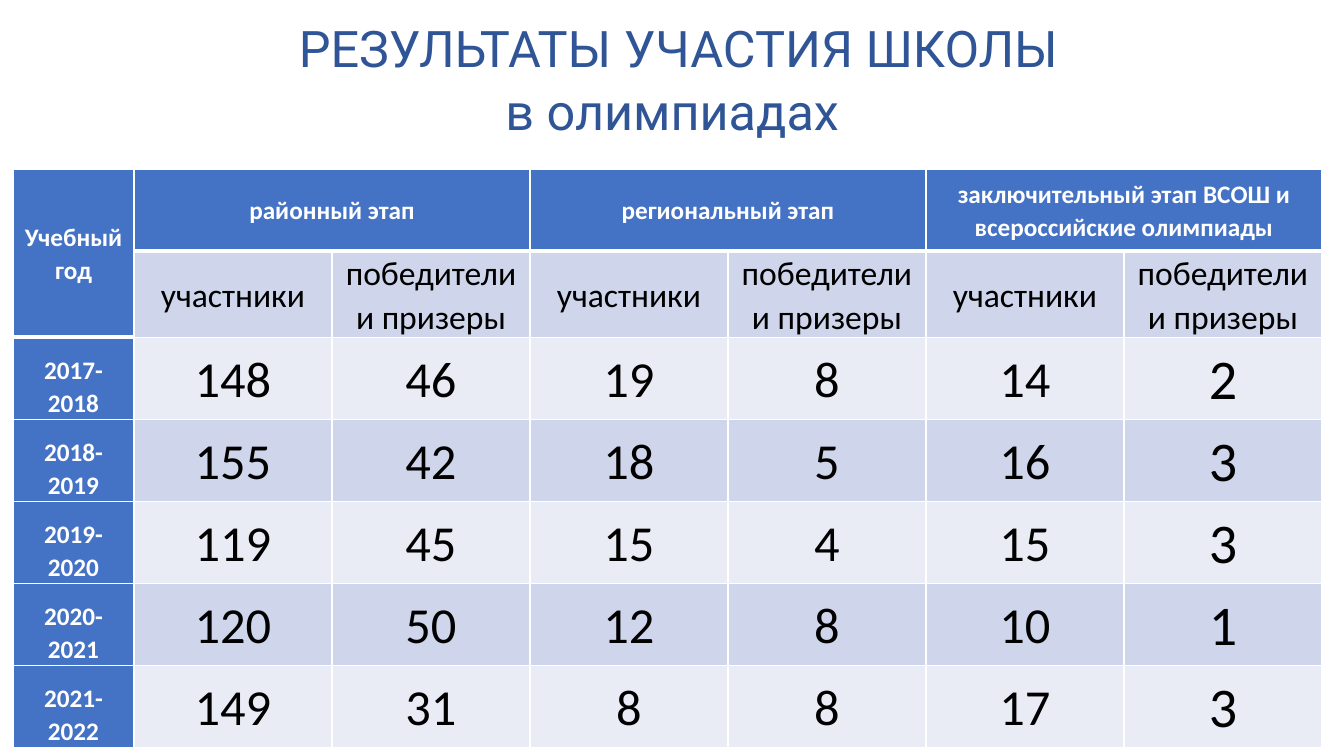
from lxml.etree import SubElement
from pptx import Presentation
from pptx.dml.color import RGBColor
from pptx.enum.text import MSO_ANCHOR, PP_ALIGN
from pptx.oxml.ns import qn
from pptx.util import Pt

TITLE = ["РЕЗУЛЬТАТЫ УЧАСТИЯ ШКОЛЫ", "в олимпиадах "]
YEAR_HEADING = "Учебный год"
STAGES = [
    "районный этап",
    "региональный этап",
    "заключительный этап ВСОШ и всероссийские олимпиады",
]
MEASURES = ["участники", "победители и призеры"]
RESULTS = [
    ("2017-2018", 148, 46, 19, 8, 14, 2),
    ("2018-2019", 155, 42, 18, 5, 16, 3),
    ("2019-2020", 119, 45, 15, 4, 15, 3),
    ("2020-2021", 120, 50, 12, 8, 10, 1),
    ("2021-2022", 149, 31, 8, 8, 17, 3),
]

EMU_PER_PX = 914400 / 100.8
SLIDE_SIZE = (1344, 756)
TITLE_BOX = (212, 13, 935, 133)
TITLE_INSETS = (8, 5, 10, 5)
TABLE_LEFT, TABLE_TOP = 13, 169
YEAR_WIDTH, VALUE_WIDTH, ROW_HEIGHT = 121, 198, 82
CELL_INSETS = (7, 0, 7, 0)

BLUE, WHITE, BLACK = "4472C4", "FFFFFF", "000000"
BANDS = ["E9EBF5", "CFD5EA"]
TITLE_FORMAT = {"name": "Roboto", "size": Pt(36), "bold": False}
HEADING_FORMAT = {"name": "Calibri", "size": Pt(18), "bold": True}
MEASURE_FORMAT = {"name": "Calibri", "size": Pt(24), "bold": False}
VALUE_FORMAT = {"name": "Calibri", "size": Pt(36), "bold": False}
LAST_VALUE_FORMAT = {**VALUE_FORMAT, "size": Pt(40)}


def px(length):
    return round(length * EMU_PER_PX)


def rgb(hex_string):
    return RGBColor.from_string(hex_string)


def set_margins(target, insets):
    for side, inset in zip(("left", "top", "right", "bottom"), insets):
        setattr(target, f"margin_{side}", px(inset))


def write(paragraph, text, font_format, color, line_spacing):
    paragraph.alignment = PP_ALIGN.CENTER
    paragraph.line_spacing = line_spacing
    run = paragraph.add_run()
    run.text = text
    for name, value in font_format.items():
        setattr(run.font, name, value)
    run.font.color.rgb = rgb(color)


def add_borders(cell, bottom_width):
    """Draw white cell borders; must run before the cell gets its fill."""
    properties = cell._tc.get_or_add_tcPr()
    for side, width in zip("LRTB", (1, 1, 1, bottom_width)):
        line = SubElement(properties, qn(f"a:ln{side}"), w=str(Pt(width)))
        fill = SubElement(line, qn("a:solidFill"))
        SubElement(fill, qn("a:srgbClr"), val=WHITE)


def add_title(slide):
    frame = slide.shapes.add_textbox(*map(px, TITLE_BOX)).text_frame
    frame.word_wrap = True
    frame.vertical_anchor = MSO_ANCHOR.BOTTOM
    set_margins(frame, TITLE_INSETS)
    for index, text in enumerate(TITLE):
        paragraph = frame.add_paragraph() if index else frame.paragraphs[0]
        write(paragraph, text, TITLE_FORMAT, "2F5597", 1.05)


def cell_format(row, column, last_column):
    """Return the font format and text colour for a place in the table."""
    if row == 0 or column == 0:
        return HEADING_FORMAT, WHITE
    if row == 1:
        return MEASURE_FORMAT, BLACK
    return (LAST_VALUE_FORMAT if column == last_column else VALUE_FORMAT), BLACK


def add_results_table(slide):
    stage_row = [YEAR_HEADING]
    for stage in STAGES:
        stage_row += [stage, ""]
    rows = [stage_row, ["", *MEASURES * len(STAGES)], *RESULTS]
    widths = [YEAR_WIDTH] + [VALUE_WIDTH] * (len(stage_row) - 1)
    table = slide.shapes.add_table(
        len(rows), len(widths), px(TABLE_LEFT), px(TABLE_TOP),
        px(sum(widths)), px(ROW_HEIGHT * len(rows)),
    ).table
    table.first_row = table.horz_banding = False
    for column, width in zip(table.columns, widths):
        column.width = px(width)
    for row in table.rows:
        row.height = px(ROW_HEIGHT)

    for row, values in enumerate(rows):
        for column, value in enumerate(values):
            cell = table.cell(row, column)
            heading = row == 0 or column == 0
            thick = row == 0 or (row, column) == (1, 0)
            add_borders(cell, 3 if thick else 1)
            cell.fill.solid()
            cell.fill.fore_color.rgb = rgb(BLUE if heading else BANDS[row % 2])
            set_margins(cell, CELL_INSETS)
            is_year = column == 0 and row > 1
            cell.vertical_anchor = MSO_ANCHOR.BOTTOM if is_year else MSO_ANCHOR.MIDDLE
            if value != "":
                font_format, color = cell_format(row, column, len(widths) - 1)
                write(cell.text_frame.paragraphs[0], str(value), font_format, color, 1.07)

    table.cell(0, 0).merge(table.cell(1, 0))
    for column in range(1, len(widths), len(MEASURES)):
        table.cell(0, column).merge(table.cell(0, column + len(MEASURES) - 1))


def main():
    presentation = Presentation()
    presentation.slide_width, presentation.slide_height = map(px, SLIDE_SIZE)
    slide = presentation.slides.add_slide(presentation.slide_layouts[6])
    add_title(slide)
    add_results_table(slide)
    presentation.save("out.pptx")


if __name__ == "__main__":
    main()
